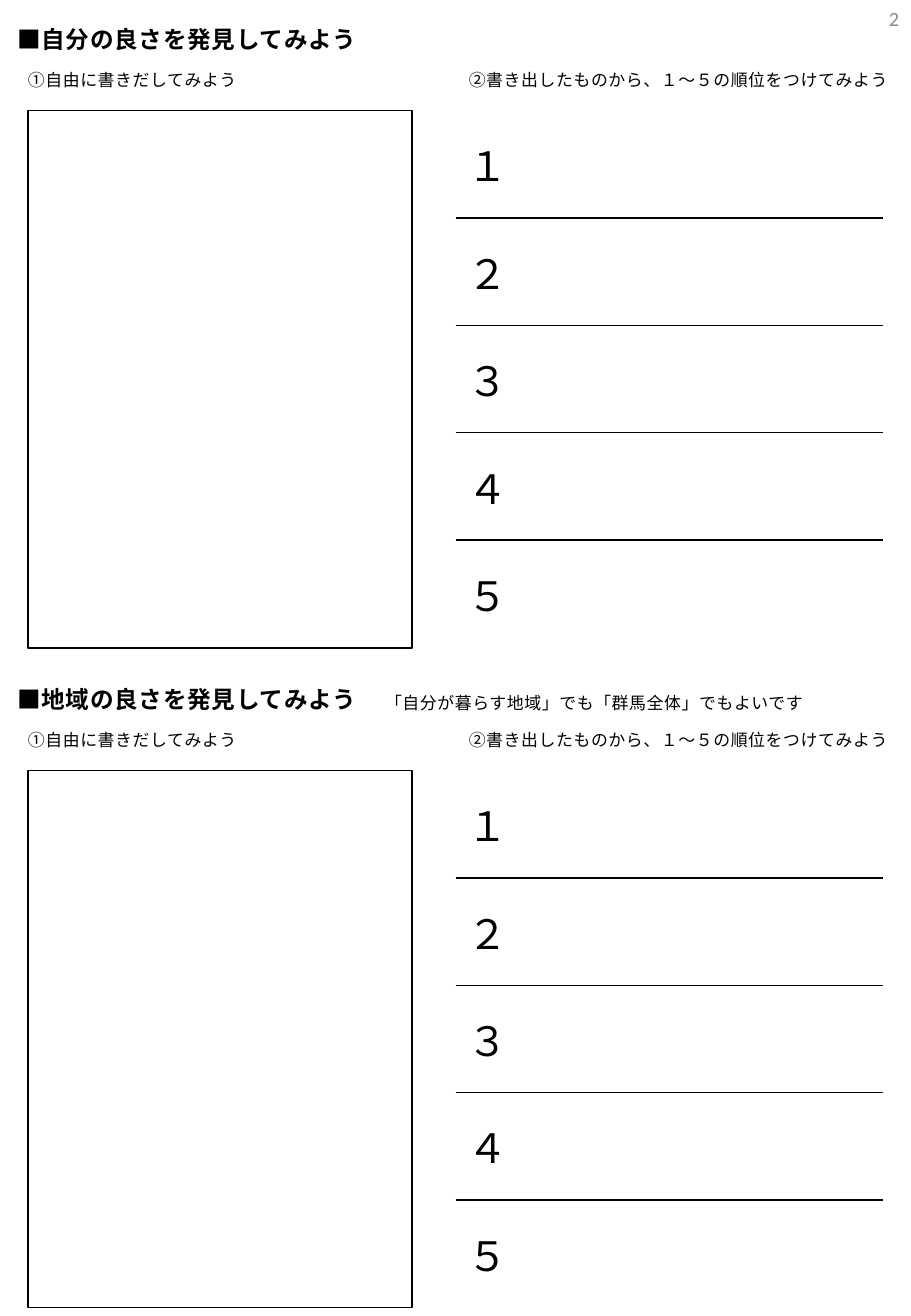
from dataclasses import dataclass
from typing import Any

from lxml import etree
from pptx import Presentation
from pptx import util as u
from pptx.dml import color
from pptx.enum import shapes, text
from pptx.oxml import ns


@dataclass(frozen=True)
class Theme:
    ink: str = "000000"
    paper: str = "FFFFFF"
    page_number: str = "8C8C8C"
    latin: str = "Arial"
    japanese: str = "Noto Sans CJK JP"
    number_font: str = "Calibri"
    heading_size: float = 14
    label_size: float = 10
    rank_size: float = 24
    number_size: float = 12
    line_spacing: float = 17.9
    tracking: str = "40"
    rule: float = 1


@dataclass(frozen=True)
class Area:
    left: float
    top: float
    width: float
    height: float


@dataclass(frozen=True)
class Section:
    heading: str
    note: str = ""


THEME = Theme()
SECTIONS = (
    Section("■自分の良さを発見してみよう"),
    Section("■地域の良さを発見してみよう", "「自分が暮らす地域」でも「群馬全体」でもよいです"),
)
FREE_LABEL = "①自由に書きだしてみよう"
RANK_LABEL = "②書き出したものから、１～５の順位をつけてみよう"
RANKS = "１２３４５"
SECTION_PITCH = 5.43

PLAIN_FRAME = {
    "margin_left": 0, "margin_top": 0, "margin_right": 0, "margin_bottom": 0,
    "word_wrap": True,
    "auto_size": text.MSO_AUTO_SIZE.NONE,
    "vertical_anchor": text.MSO_ANCHOR.TOP,
}
PLAIN_PARA = {"alignment": text.PP_ALIGN.LEFT, "line_spacing": u.Pt(THEME.line_spacing)}
LABEL_FONT = {"name": THEME.latin, "size": u.Pt(THEME.label_size), "bold": False}
HEADING_FONT = {"name": THEME.latin, "size": u.Pt(THEME.heading_size), "bold": True}
RANK_FONT = {"name": THEME.japanese, "size": u.Pt(THEME.rank_size), "bold": False}
NUMBER_FONT = {"name": THEME.number_font, "size": u.Pt(THEME.number_size), "bold": False}


def apply(target: Any, values: dict[str, Any]) -> None:
    for name, value in values.items():
        setattr(target, name, value)


def lengths(area: Area) -> tuple[u.Length, ...]:
    return tuple(u.Inches(n) for n in (area.left, area.top, area.width, area.height))


def add_span(para: Any, words: str, font: dict[str, Any], ink: str = THEME.ink) -> Any:
    span = para.add_run()
    span.text = words
    apply(span.font, font)
    span.font.color.rgb = color.RGBColor.from_string(ink)
    return span


def add_japanese(para: Any, words: str, font: dict[str, Any], tracked: bool = True) -> None:
    properties = add_span(para, words, font)._r.get_or_add_rPr()
    etree.SubElement(properties, ns.qn("a:ea"), typeface=THEME.japanese)
    if tracked:
        properties.set("spc", THEME.tracking)


def fill_box(box: Any, words: str, font: dict[str, Any]) -> None:
    apply(box.text_frame, PLAIN_FRAME)
    para = box.text_frame.paragraphs[0]
    apply(para, PLAIN_PARA)
    add_japanese(para, words, font)


def add_label(page: Any, area: Area, words: str, font: dict[str, Any] = LABEL_FONT) -> None:
    fill_box(page.shapes.add_textbox(*lengths(area)), words, font)


def add_heading(page: Any, area: Area, words: str) -> None:
    title = page.shapes.title
    if title.has_text_frame and title.text_frame.text:
        add_label(page, area, words, HEADING_FONT)
        return
    apply(title, dict(zip(("left", "top", "width", "height"), lengths(area))))
    fill_box(title, words, HEADING_FONT)


def add_writing_box(page: Any, area: Area) -> None:
    box = page.shapes.add_shape(shapes.MSO_SHAPE.ROUNDED_RECTANGLE, *lengths(area))
    box.adjustments[0] = 0
    box.shadow.inherit = False
    box.fill.solid()
    box.fill.fore_color.rgb = color.RGBColor.from_string(THEME.paper)
    box.line.color.rgb = color.RGBColor.from_string(THEME.ink)
    box.line.width = u.Pt(THEME.rule)


def set_borders(cell: Any, ruled: set[str]) -> None:
    properties = cell._tc.get_or_add_tcPr()
    for side in ("lnL", "lnR", "lnT", "lnB"):
        line = etree.SubElement(properties, ns.qn(f"a:{side}"), w=str(u.Pt(THEME.rule)))
        if side in ruled:
            fill = etree.SubElement(line, ns.qn("a:solidFill"))
            etree.SubElement(fill, ns.qn("a:srgbClr"), val=THEME.ink)
        else:
            etree.SubElement(line, ns.qn("a:noFill"))


def add_ranking(page: Any, area: Area) -> None:
    table = page.shapes.add_table(len(RANKS), 1, *lengths(area)).table
    apply(table, {"first_row": False, "horz_banding": False})
    last = len(RANKS) - 1
    for index, rank in enumerate(RANKS):
        cell = table.cell(index, 0)
        cell.vertical_anchor = text.MSO_ANCHOR.MIDDLE
        add_japanese(cell.text_frame.paragraphs[0], rank, RANK_FONT, tracked=False)
        ruled = ({"lnT"} if index > 0 else set()) | ({"lnB"} if index < last else set())
        set_borders(cell, ruled)
        cell.fill.background()


def add_section(page: Any, section: Section, offset: float) -> None:
    add_heading(page, Area(0.14, offset + 0.19, 6.72, 0.24), section.heading)
    add_writing_box(page, Area(0.23, offset + 0.91, 3.16, 4.42))
    add_ranking(page, Area(3.75, offset + 0.91, 3.52, 4.42))
    add_label(page, Area(0.23, offset + 0.49, 3.16, 0.23), FREE_LABEL)
    add_label(page, Area(3.86, offset + 0.49, 3.64, 0.23), RANK_LABEL)
    if section.note:
        add_label(page, Area(3.17, offset + 0.19, 4.33, 0.23), section.note)


def add_page_number(page: Any) -> None:
    box = page.shapes.add_textbox(*lengths(Area(5.81, -0.02, 1.69, 0.35)))
    apply(box.text_frame, {"word_wrap": True, "vertical_anchor": text.MSO_ANCHOR.MIDDLE})
    para = box.text_frame.paragraphs[0]
    para.alignment = text.PP_ALIGN.RIGHT
    add_span(para, "2", NUMBER_FONT, THEME.page_number)


def main() -> None:
    deck = Presentation()
    apply(deck, {"slide_width": u.Inches(7.5), "slide_height": u.Inches(10.83)})
    page = deck.slides.add_slide(deck.slide_layouts.get_by_name("Title Only"))
    for index, section in enumerate(SECTIONS):
        add_section(page, section, index * SECTION_PITCH)
    add_page_number(page)
    deck.save("out.pptx")


if __name__ == "__main__":
    main()
